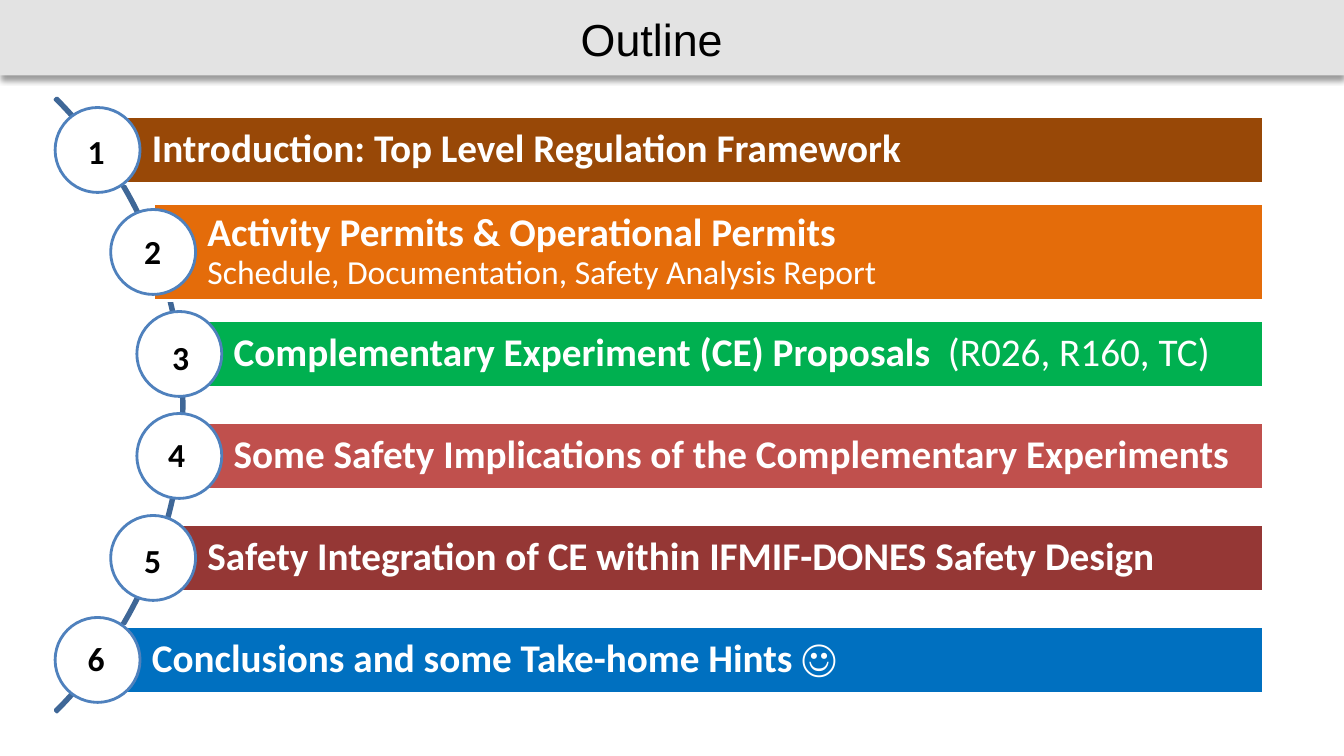
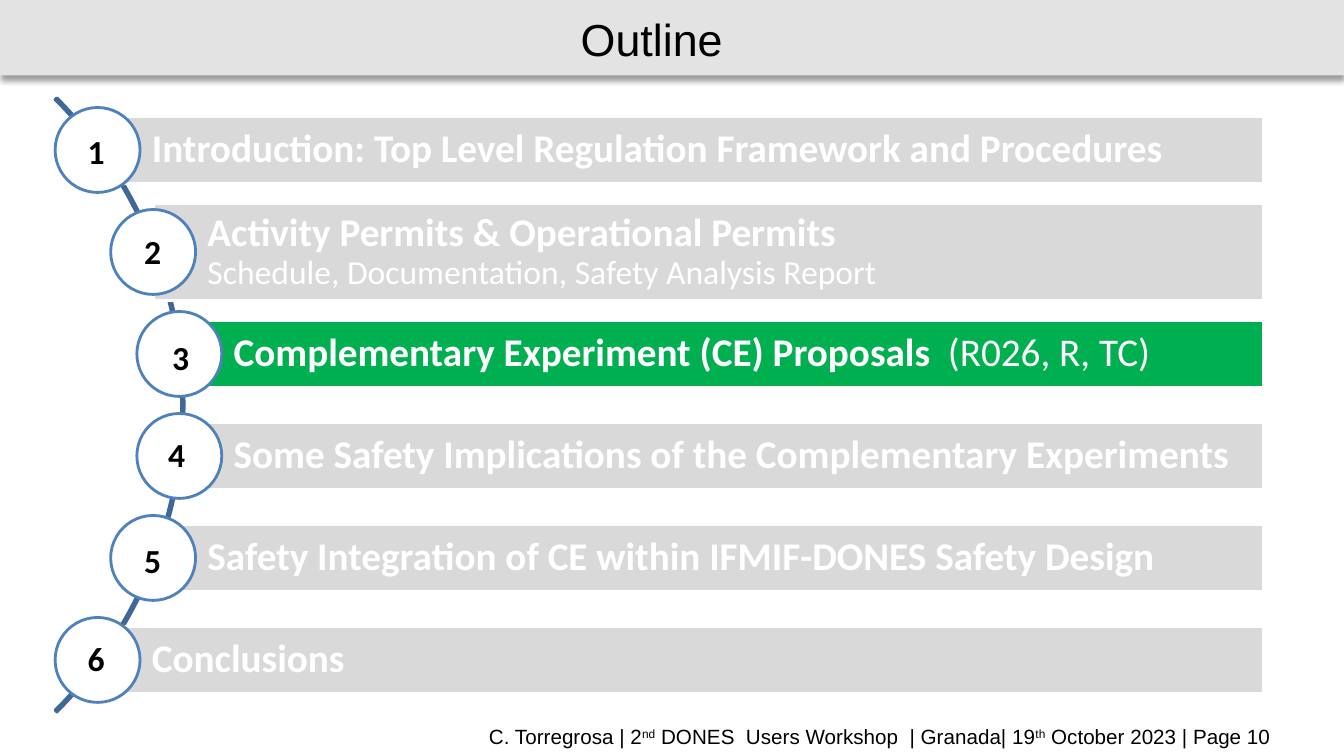
from lxml import etree
from pptx import Presentation
from pptx.dml.color import RGBColor
from pptx.enum import shapes, text
from pptx.oxml.ns import qn
from pptx.util import Cm, Pt

BLACK = RGBColor(0x00, 0x00, 0x00)
WHITE = RGBColor(0xFF, 0xFF, 0xFF)
BAND = RGBColor(0xE3, 0xE3, 0xE3)
MUTED = RGBColor(0xD9, 0xD9, 0xD9)
ARC_LINE = RGBColor(0x3F, 0x67, 0x97)
CIRCLE_LINE = RGBColor(0x4F, 0x81, 0xBD)
BROWN = RGBColor(0x98, 0x48, 0x07)
ORANGE = RGBColor(0xE4, 0x6C, 0x0A)
GREEN = RGBColor(0x00, 0xB0, 0x50)
RED = RGBColor(0xC0, 0x50, 0x4D)
MAROON = RGBColor(0x95, 0x37, 0x35)
BLUE = RGBColor(0x00, 0x70, 0xC0)

TITLE_FORMAT = {"name": "Arial", "size": Pt(32), "color": BLACK}
FOOTER_FORMAT = {"name": "Arial", "size": Pt(14.7), "color": BLACK}
NUMBER_FORMAT = {"name": "Calibri", "size": Pt(24), "bold": True, "color": BLACK}
TOPIC_FORMAT = {"name": "Calibri", "size": Pt(28), "bold": True, "color": WHITE}
ASIDE_FORMAT = {**TOPIC_FORMAT, "bold": False}
DETAIL_FORMAT = {**ASIDE_FORMAT, "size": Pt(24)}

ROWS = [
    {"color": BROWN, "left": 2.46, "height": 1.7, "number_at": (1.96, 3.18)},
    {"color": ORANGE, "left": 3.86, "height": 2.46, "number_at": (3.38, 5.69)},
    {"color": GREEN, "left": 4.52, "height": 1.7, "number_at": (4.09, 8.36)},
    {"color": RED, "left": 4.52, "height": 1.7, "number_at": (3.99, 10.82)},
    {"color": MAROON, "left": 3.86, "height": 1.7, "number_at": (3.38, 13.49)},
    {"color": BLUE, "left": 2.46, "height": 1.7, "number_at": (1.96, 15.95)},
]
FIRST_CENTRE, PITCH = 3.78, 2.57
BAR_RIGHT, CIRCLE = 31.83, 2.14


def topics(introduction, proposals, conclusions):
    return [
        [(introduction, TOPIC_FORMAT)],
        [("Activity Permits & Operational Permits", TOPIC_FORMAT), None,
         ("Schedule, Documentation, Safety Analysis Report", DETAIL_FORMAT)],
        [("Complementary Experiment (CE) Proposals  ", TOPIC_FORMAT), (proposals, ASIDE_FORMAT)],
        [("Some Safety Implications of the Complementary Experiments", TOPIC_FORMAT)],
        [("Safety Integration of CE within IFMIF-DONES Safety Design", TOPIC_FORMAT)],
        [(conclusions, TOPIC_FORMAT)],
    ]


SUPERSCRIPT = {**FOOTER_FORMAT, "baseline": 30000}
FOOTER = [
    ("C. Torregrosa | 2", FOOTER_FORMAT),
    ("nd", SUPERSCRIPT),
    (" DONES  Users Workshop  | Granada| 19", FOOTER_FORMAT),
    ("th", SUPERSCRIPT),
    (" October 2023 | Page 10", FOOTER_FORMAT),
]
SLIDES = [
    {"topics": topics("Introduction: Top Level Regulation Framework",
                      "(R026, R160, TC)",
                      "Conclusions and some Take-home Hints ☺"),
     "active": {1, 2, 3, 4, 5, 6}, "footer": None},
    {"topics": topics("Introduction: Top Level Regulation Framework and Procedures",
                      "(R026, R, TC)",
                      "Conclusions"),
     "active": {3}, "footer": FOOTER},
]


def write(sp, runs, align=text.PP_ALIGN.LEFT, anchor=text.MSO_ANCHOR.MIDDLE):
    tf = sp.text_frame
    tf.word_wrap = True
    tf.vertical_anchor = anchor
    p = tf.paragraphs[0]
    p.alignment = align
    for run in runs:
        if run is None:
            p.add_line_break()
            continue
        r = p.add_run()
        r.text, values = run
        for key, value in values.items():
            if key == "color":
                r.font.color.rgb = value
            elif key == "baseline":
                r._r.get_or_add_rPr().set(key, str(value))
            else:
                setattr(r.font, key, value)
    return p


def add_text(s, box, runs, **layout):
    sp = s.shapes.add_textbox(*map(Cm, box))
    write(sp, runs, **layout)


def add_shape(s, kind, box, fill=None, line=None):
    sp = s.shapes.add_shape(kind, *map(Cm, box))
    sp.shadow.inherit = False
    if fill is None:
        sp.fill.background()
    else:
        sp.fill.solid()
        sp.fill.fore_color.rgb = fill
    if line is None:
        sp.line.fill.background()
    else:
        sp.line.color.rgb = line
        sp.line.width = Pt(2)
    return sp


def add_header(s):
    band = add_shape(s, shapes.MSO_SHAPE.RECTANGLE, (0, 0, 33.87, 1.9), BAND)
    effects = band._element.spPr.find(qn("a:effectLst"))
    shadow = etree.SubElement(effects, qn("a:outerShdw"), blurRad=str(Pt(4)),
                              dist=str(Pt(3)), dir="5400000", rotWithShape="0")
    color = etree.SubElement(shadow, qn("a:srgbClr"), val=str(BLACK))
    etree.SubElement(color, qn("a:alpha"), val="40000")
    add_text(s, (8.41, -0.25, 16.03, 2.46), [("Outline", TITLE_FORMAT)],
             align=text.PP_ALIGN.CENTER)


def add_arc(s):
    arc = add_shape(s, shapes.MSO_SHAPE.BLOCK_ARC, (-17.25, -0.74, 21.89, 21.89), line=ARC_LINE)
    for i, value in enumerate((189, 27, 0.003)):
        arc.adjustments[i] = value


def add_topic(s, index, runs, active):
    row = ROWS[index]
    left, height = row["left"], row["height"]
    centre = FIRST_CENTRE + index * PITCH
    bar = add_shape(s, shapes.MSO_SHAPE.RECTANGLE,
                    (left, centre - height / 2, BAR_RIGHT - left, height),
                    row["color"] if active else MUTED, WHITE)
    tf = bar.text_frame
    for side, inset in {"left": 1.37, "top": 0.2, "right": 0.2, "bottom": 0.2}.items():
        setattr(tf, f"margin_{side}", Cm(inset))
    write(bar, runs).line_spacing = 0.9
    add_shape(s, shapes.MSO_SHAPE.OVAL,
              (left - CIRCLE / 2, centre - CIRCLE / 2, CIRCLE, CIRCLE), WHITE, CIRCLE_LINE)
    add_text(s, (*row["number_at"], 0.99, 1.27), [(str(index + 1), NUMBER_FORMAT)],
             anchor=text.MSO_ANCHOR.TOP)


def main():
    prs = Presentation()
    prs.slide_width, prs.slide_height = Cm(33.87), Cm(19.05)
    for content in SLIDES:
        s = prs.slides.add_slide(prs.slide_layouts[6])
        add_header(s)
        add_arc(s)
        for index, runs in enumerate(content["topics"]):
            add_topic(s, index, runs, index + 1 in content["active"])
        if content["footer"]:
            add_text(s, (1.73, 18.19, 30.53, 0.74), content["footer"],
                     align=text.PP_ALIGN.RIGHT)
    prs.save("out.pptx")


if __name__ == "__main__":
    main()
